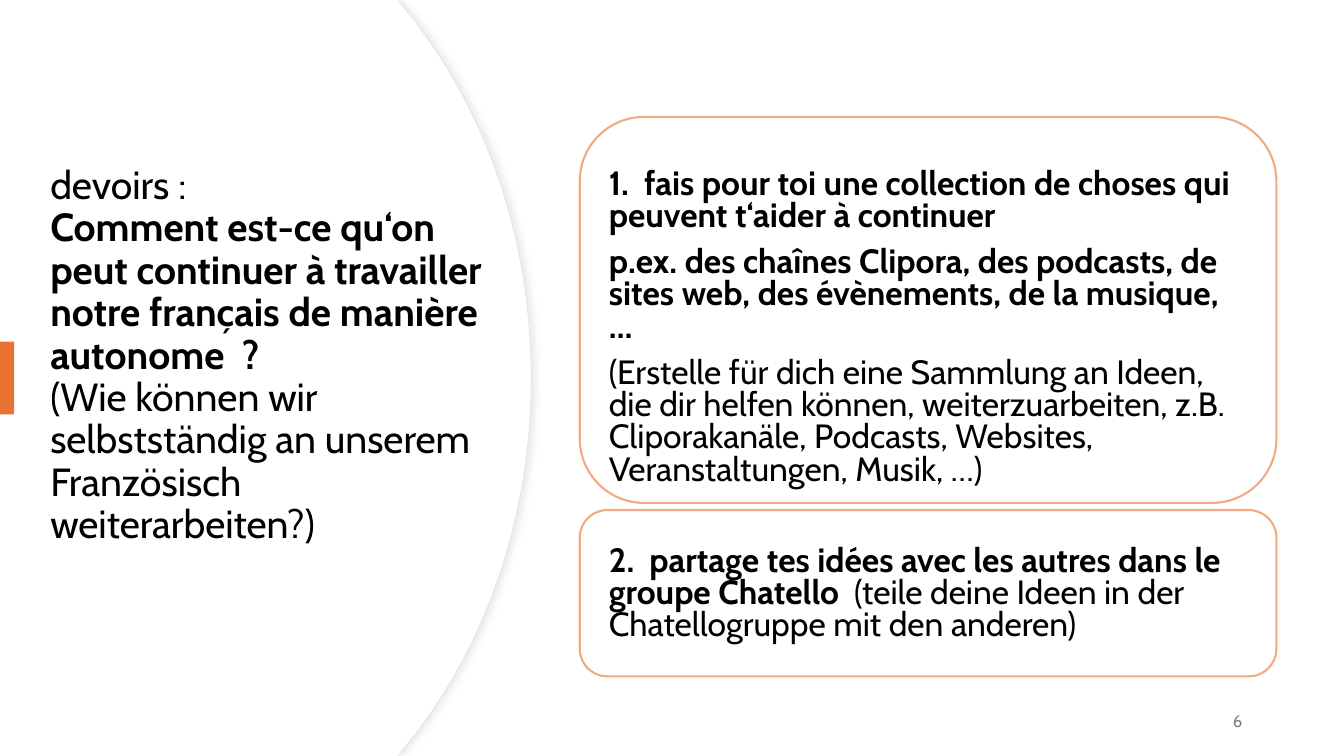
"""Builds a homework slide: a curved question panel beside two outlined task cards."""
from lxml import etree
from pptx import Presentation
from pptx import util as u
from pptx.dml.color import RGBColor
from pptx.enum import shapes, text
from pptx.oxml import ns

FONT = "Cabin"
STEPS = 24


def paint(color_format, hex_color):
    color_format.rgb = RGBColor.from_string(hex_color)


def add_text(s, box, paragraphs, size, color, anchor, spacing=1.0):
    sp = s.shapes.add_textbox(*[u.Inches(v) for v in box])
    tf = sp.text_frame
    tf.word_wrap = True
    tf.vertical_anchor = anchor
    for i, (before, runs) in enumerate(paragraphs):
        p = tf.paragraphs[0] if i == 0 else tf.add_paragraph()
        p.line_spacing = spacing
        p.space_before = u.Pt(before)
        for words, bold in runs:
            r = p.add_run()
            r.text = words
            r.font.name = FONT
            r.font.size = u.Pt(size)
            r.font.bold = bold
            paint(r.font.color, color)
    return tf


prs = Presentation()
prs.slide_width, prs.slide_height = u.Inches(13.33), u.Inches(7.5)
s = prs.slides.add_slide(prs.slide_layouts[6])

for right, has_edge in ((5.27, True), (5.26, False)):
    shoulder = right - 1.26
    curve = [(shoulder, 0.08), (right - 0.48, 1.02), (right, 2.32), (right, 3.75)]
    upper = [(3.94, 0)]
    for i in range(STEPS + 1):
        t = i / STEPS
        weights = ((1 - t) ** 3, 3 * t * (1 - t) ** 2, 3 * t * t * (1 - t), t ** 3)
        upper.append(tuple(sum(w * pt[k] for w, pt in zip(weights, curve)) for k in (0, 1)))
    lower = [(x, 7.5 - y) for x, y in reversed(upper[:-1])]
    fb = s.shapes.build_freeform(0, 0, scale=u.Inches(1) / 1000)
    fb.add_line_segments([(x * 1000, y * 1000) for x, y in upper + lower + [(0, 7.5)]])
    sp = fb.convert_to_shape()
    sp.shadow.inherit = False
    sp.fill.solid()
    paint(sp.fill.fore_color, "FFFFFF")
    if has_edge:
        sp.line.width = u.Pt(0.75)
        paint(sp.line.color, "E6E6E6")
        effects = sp._element.spPr.find(ns.qn("a:effectLst"))
        shadow = etree.SubElement(effects, ns.qn("a:outerShdw"), blurRad=str(u.Pt(4)),
                                  dist=str(u.Pt(3)), dir="0", algn="l", rotWithShape="0")
        tint = etree.SubElement(shadow, ns.qn("a:srgbClr"), val="D9D9D9")
        etree.SubElement(tint, ns.qn("a:alpha"), val="50000")
    else:
        sp.line.fill.background()

question = [
    (0, [("devoirs :", False)]),
    (0, [("Comment est-ce qu‘on peut continuer à travailler notre français "
          "de manière autonome  ?", True)]),
    (0, [("(Wie können wir selbstständig an unserem Französisch weiterarbeiten?)", False)]),
]
add_text(s, (0.4, 1.06, 4.68, 4.95), question, 28, "000000", text.MSO_ANCHOR.MIDDLE, 0.9)

sp = s.shapes.add_shape(shapes.MSO_SHAPE.RECTANGLE, 0, u.Inches(3.39), u.Inches(0.14), u.Inches(0.72))
sp.shadow.inherit = False
sp.fill.solid()
paint(sp.fill.fore_color, "E97132")
sp.line.fill.background()

tasks = [
    (0, [("1.  fais pour toi une collection de choses qui peuvent t‘aider à continuer", True)]),
    (10, [("p.ex. des chaînes Clipora, des podcasts, de sites web, des évènements, "
           "de la musique, …", True)]),
    (10, [("(Erstelle für dich eine Sammlung an Ideen, die dir helfen können, weiterzuarbeiten, "
           "z.B. Cliporakanäle, Podcasts, Websites, Veranstaltungen, Musik, …)", False)]),
    (42, [("2.  partage tes idées avec les autres dans le groupe Chatello  ", True),
          ("(teile deine Ideen in der Chatellogruppe mit den anderen)", False)]),
]
add_text(s, (5.94, 1.63, 6.47, 4.85), tasks, 24, "000000", text.MSO_ANCHOR.TOP, 0.8)

tf = add_text(s, (11.32, 6.95, 1.1, 0.4), [(0, [("6", False)])], 12, "808080", text.MSO_ANCHOR.MIDDLE)
tf.paragraphs[0].alignment = text.PP_ALIGN.RIGHT
tf.paragraphs[0].space_after = u.Pt(6)

for top, height in ((1.16, 3.83), (5.06, 1.65)):
    sp = s.shapes.add_shape(shapes.MSO_SHAPE.ROUNDED_RECTANGLE, u.Inches(5.75), u.Inches(top),
                            u.Inches(6.91), u.Inches(height))
    sp.shadow.inherit = False
    sp.fill.background()
    sp.line.width = u.Pt(1.5)
    paint(sp.line.color, "F2AA84")

prs.save("out.pptx")
